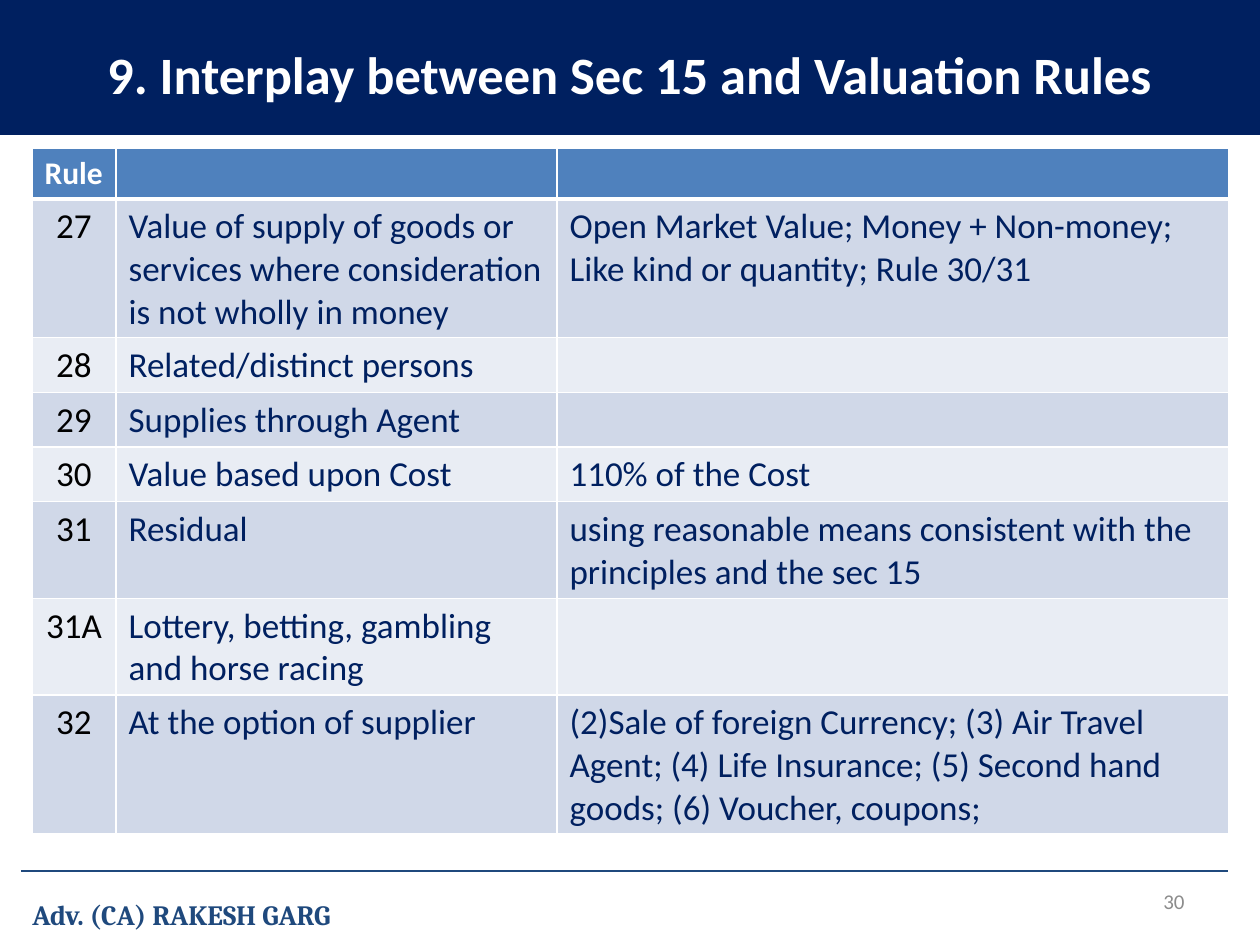
from typing import NamedTuple

from lxml.etree import SubElement
from pptx import Presentation
from pptx.dml.color import RGBColor
from pptx.enum.shapes import MSO_CONNECTOR as CONN, MSO_SHAPE as SHAPE
from pptx.enum.text import MSO_ANCHOR as ANCHOR, PP_ALIGN as ALIGN
from pptx.oxml.ns import qn
from pptx.util import Emu, Pt

PX_PER_INCH = 126
NAVY, BLUE, WHITE, BLACK, GREY = "002060", "1F497D", "FFFFFF", "000000", "8C8C8C"
HEADER_FILL, BANDS = "4F81BD", ("D0D8E8", "E9EDF4")


class Box(NamedTuple):
    left: int
    top: int
    width: int
    height: int


class Style(NamedTuple):
    size: int
    color: str
    bold: bool = False
    font: str = "Calibri"


class Rule(NamedTuple):
    number: str
    subject: str
    basis: str = ""


RULES = [
    Rule("27", "Value of supply of goods or services where consideration is not wholly in money",
         "Open Market Value; Money + Non-money; Like kind or quantity; Rule 30/31"),
    Rule("28", "Related/distinct persons"),
    Rule("29", "Supplies through Agent"),
    Rule("30", "Value based upon Cost", "110% of the Cost"),
    Rule("31", "Residual",
         "using reasonable means consistent with the principles and the sec 15"),
    Rule("31A", "Lottery, betting, gambling and horse racing"),
    Rule("32", "At the option of supplier",
         "(2)Sale of foreign Currency; (3) Air Travel Agent; (4) Life Insurance; "
         "(5) Second hand goods; (6) Voucher, coupons;"),
]
COLUMNS = (84, 441, 672)
ROW_HEIGHT = 51


def px(n: int) -> Emu:
    return Emu(round(n * 914400 / PX_PER_INCH))


def rgb(color: str) -> RGBColor:
    return RGBColor.from_string(color)


def write(tf, text: str, style: Style, **formats) -> None:
    """Fill the first paragraph and apply the paragraph formats."""
    p = tf.paragraphs[0]
    for name, value in formats.items():
        setattr(p, name, value)
    r = p.add_run()
    r.text = text
    r.font.color.rgb = rgb(style.color)
    fonts = {"name": style.font, "size": Pt(style.size), "bold": style.bold}
    for name, value in fonts.items():
        setattr(r.font, name, value)


def add_text(s, box: Box, text: str, style: Style, anchor=ANCHOR.TOP, **formats) -> None:
    tf = s.shapes.add_textbox(*map(px, box)).text_frame
    tf.word_wrap = True
    tf.vertical_anchor = anchor
    write(tf, text, style, **formats)


def add_banner(s, box: Box, text: str, style: Style) -> None:
    sp = s.shapes.add_shape(SHAPE.RECTANGLE, *map(px, box))
    sp.shadow.inherit = False
    sp.fill.solid()
    sp.fill.fore_color.rgb = rgb(NAVY)
    sp.line.fill.background()
    sp.text_frame.vertical_anchor = ANCHOR.MIDDLE
    write(sp.text_frame, text, style, alignment=ALIGN.CENTER,
          line_spacing=1.2, space_before=Pt(6))


def add_rule_line(s, left: int, right: int, y: int) -> None:
    line = s.shapes.add_connector(CONN.STRAIGHT, px(left), px(y), px(right), px(y))
    line.line.color.rgb = rgb(BLUE)
    line.line.width = Pt(0.75)
    SubElement(line._element.spPr, qn("a:effectLst"))


def paint_cell(cell, fill: str, top: int = 1, bottom: int = 1) -> None:
    """Draw white borders, then the fill, in the order the format requires."""
    tc_pr = cell._tc.get_or_add_tcPr()
    for side, width in {"L": 1, "R": 1, "T": top, "B": bottom}.items():
        ln = SubElement(tc_pr, qn(f"a:ln{side}"), w=str(Pt(width)))
        SubElement(SubElement(ln, qn("a:solidFill")), qn("a:srgbClr"), val=WHITE)
    cell.fill.solid()
    cell.fill.fore_color.rgb = rgb(fill)


def add_rules_table(s, left: int, top: int) -> None:
    rows = len(RULES) + 1
    box = Box(left, top, sum(COLUMNS), rows * ROW_HEIGHT)
    table = s.shapes.add_table(rows, len(COLUMNS), *map(px, box)).table
    for column, width in zip(table.columns, COLUMNS):
        column.width = px(width)

    # Header
    for cell in table.rows[0].cells:
        paint_cell(cell, HEADER_FILL, bottom=3)
    write(table.cell(0, 0).text_frame, "Rule", Style(18, WHITE, True))

    # Banded body
    for i, rule in enumerate(RULES, 1):
        for j, text in enumerate(rule):
            cell = table.cell(i, j)
            paint_cell(cell, BANDS[(i - 1) % 2], top=3 if i == 1 else 1)
            if text:
                write(cell.text_frame, text, Style(20, NAVY if j else BLACK),
                      alignment=ALIGN.LEFT if j else ALIGN.CENTER)


def main() -> None:
    prs = Presentation()
    prs.slide_width, prs.slide_height = px(1260), px(945)
    s = prs.slides.add_slide(prs.slide_layouts[6])

    # Page number and footer line
    add_text(s, Box(903, 876, 294, 50), "30", Style(12, GREY),
             ANCHOR.MIDDLE, alignment=ALIGN.RIGHT)
    add_rule_line(s, 21, 1228, 871)

    # Title and table
    add_banner(s, Box(0, -1, 1260, 136),
               "9. Interplay between Sec 15 and Valuation Rules", Style(30, WHITE, True))
    add_rules_table(s, 32, 148)

    # Author
    add_text(s, Box(20, 891, 348, 44), "Adv. (CA) RAKESH GARG",
             Style(16, BLUE, True, "Cambria"), space_before=Pt(3), space_after=Pt(3))

    prs.save("out.pptx")


if __name__ == "__main__":
    main()
